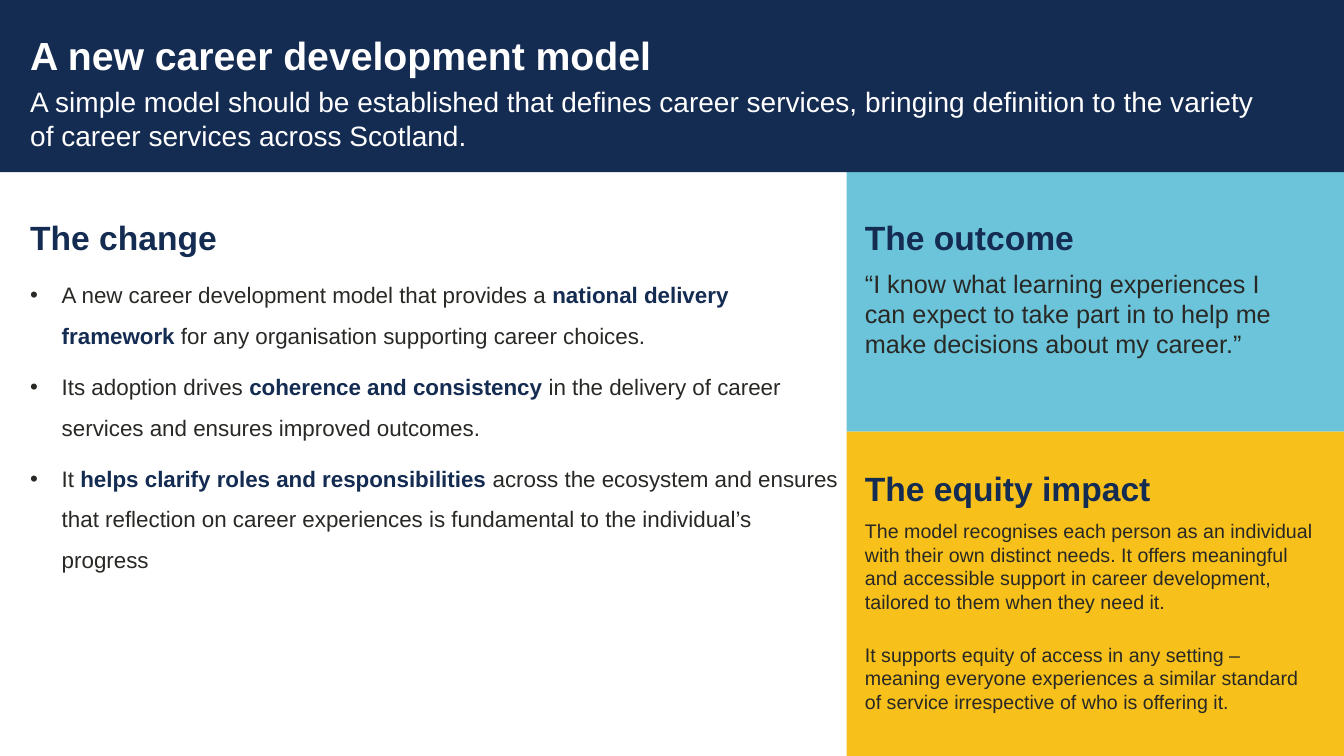
"""Build the slide presenting a new career development model."""
from dataclasses import dataclass

from lxml.etree import SubElement
from pptx import Presentation
from pptx.dml.color import RGBColor
from pptx.enum.shapes import MSO_SHAPE as Preset
from pptx.enum.text import MSO_ANCHOR as Anchor, MSO_AUTO_SIZE as AutoSize, PP_ALIGN as Align
from pptx.oxml.ns import qn
from pptx.shapes.autoshape import Shape
from pptx.slide import Slide
from pptx.util import Pt

WHITE = RGBColor(0xFF, 0xFF, 0xFF)
NAVY = RGBColor(0x14, 0x2B, 0x52)
SKY = RGBColor(0x6C, 0xC4, 0xDA)
AMBER = RGBColor(0xF7, 0xC0, 0x1B)
INK = RGBColor(0x28, 0x28, 0x25)

SLIDE_WIDTH, SLIDE_HEIGHT = 960, 540
HEADER_HEIGHT = 123
SIDE_LEFT, EQUITY_TOP = 604.8, 308.3
MARGIN, SIDE_MARGIN = 21.6, 617.8
INDENT = 22.5


@dataclass(frozen=True)
class Box:
    left: float
    top: float
    width: float
    height: float


@dataclass(frozen=True)
class Panel:
    box: Box
    color: RGBColor


@dataclass(frozen=True)
class Para:
    """A paragraph whose asterisks enclose emphasised words."""
    text: str
    size: float
    color: RGBColor = INK
    bold: bool = False
    after: float = 8
    spacing: float = 1.0
    bullet: bool = False


@dataclass(frozen=True)
class Section:
    box: Box
    paras: tuple[Para, ...]


def heading(text: str) -> Para:
    return Para(text, 24, NAVY, bold=True, spacing=1.5)


def point(text: str) -> Para:
    return Para(text, 16, spacing=1.5, bullet=True)


PANELS = (
    Panel(Box(SIDE_LEFT, HEADER_HEIGHT, SLIDE_WIDTH - SIDE_LEFT, EQUITY_TOP - HEADER_HEIGHT), SKY),
    Panel(Box(SIDE_LEFT, EQUITY_TOP, SLIDE_WIDTH - SIDE_LEFT, SLIDE_HEIGHT - EQUITY_TOP), AMBER),
    Panel(Box(0, 0, SLIDE_WIDTH, HEADER_HEIGHT), NAVY),
)

HEADLINE = Section(Box(MARGIN, 22.3, 730.8, 47.5), (
    Para("A new career development model", 28, WHITE, bold=True, after=0),
))

SECTIONS = (
    Section(Box(MARGIN, 60.5, 910, 60.5), (
        Para("A simple model should be established that defines career services, bringing "
             "definition to the variety \nof career services across Scotland.", 20, WHITE),
    )),
    Section(Box(MARGIN, 140.4, 577.4, 296), (
        heading("The change"),
        point("A new career development model that provides a *national delivery framework *"
              "for any organisation supporting career choices."),
        point("Its adoption drives *coherence and consistency *in the delivery of career "
              "services and ensures improved outcomes."),
        point("It *helps clarify roles and responsibilities *across the ecosystem and ensures "
              "that reflection on career experiences is fundamental to the individual’s progress"),
    )),
    Section(Box(SIDE_MARGIN, 140.4, 327, 157), (
        heading("The outcome"),
        Para("“I know what learning experiences I \ncan expect to take part in to help me "
             "make decisions about my career.”", 18),
    )),
    Section(Box(SIDE_MARGIN, 319.7, 320.4, 220), (
        heading("The equity impact"),
        Para("The model recognises each person as an individual with their own distinct needs. "
             "It offers meaningful and accessible support in career development, tailored to "
             "them when they need it.", 14, after=21),
        Para("It supports equity of access in any setting – meaning everyone experiences a "
             "similar standard of service irrespective of who is offering it.", 14, after=2),
    )),
)


def lengths(box: Box) -> tuple[Pt, Pt, Pt, Pt]:
    return Pt(box.left), Pt(box.top), Pt(box.width), Pt(box.height)


def draw_panel(slide: Slide, panel: Panel) -> None:
    block = slide.shapes.add_shape(Preset.RECTANGLE, *lengths(panel.box))
    block.shadow.inherit = False
    block.fill.solid()
    block.fill.fore_color.rgb = panel.color
    block.line.fill.background()


def write_paras(holder: Shape, paras: tuple[Para, ...]) -> None:
    frame = holder.text_frame
    frame.word_wrap = True
    frame.auto_size = AutoSize.NONE
    frame.vertical_anchor = Anchor.TOP
    frame.margin_left = frame.margin_top = frame.margin_right = frame.margin_bottom = 0
    for index, para in enumerate(paras):
        line = frame.add_paragraph() if index else frame.paragraphs[0]
        line.alignment = Align.LEFT
        line.space_before, line.space_after = Pt(0), Pt(para.after)
        line.line_spacing = para.spacing
        first, *rest = para.text.split("*")
        line.text = first
        for piece in rest:
            line.add_run().text = piece
        for position, run in enumerate(line.runs):
            emphasised = bool(rest) and position % 2 == 1
            run.font.name = "Arial"
            run.font.size = Pt(para.size)
            run.font.bold = para.bold or emphasised
            run.font.color.rgb = NAVY if emphasised else para.color
        if para.bullet:
            props = line._p.get_or_add_pPr()
            props.set("marL", str(Pt(INDENT)))
            props.set("indent", str(-Pt(INDENT)))
            SubElement(props, qn("a:buFont"), typeface="Arial")
            SubElement(props, qn("a:buChar"), char="•")


def draw_headline(slide: Slide, headline: Section) -> None:
    title = slide.shapes.title
    slide.shapes.element.append(title.element)
    title.left, title.top, title.width, title.height = lengths(headline.box)
    write_paras(title, headline.paras)


def draw_section(slide: Slide, section: Section) -> None:
    write_paras(slide.shapes.add_textbox(*lengths(section.box)), section.paras)


def main() -> None:
    deck = Presentation()
    deck.slide_width, deck.slide_height = Pt(SLIDE_WIDTH), Pt(SLIDE_HEIGHT)
    slide = deck.slides.add_slide(deck.slide_layouts.get_by_name("Title Only"))
    for panel in PANELS:
        draw_panel(slide, panel)
    draw_headline(slide, HEADLINE)
    for section in SECTIONS:
        draw_section(slide, section)
    deck.save("out.pptx")


if __name__ == "__main__":
    main()
